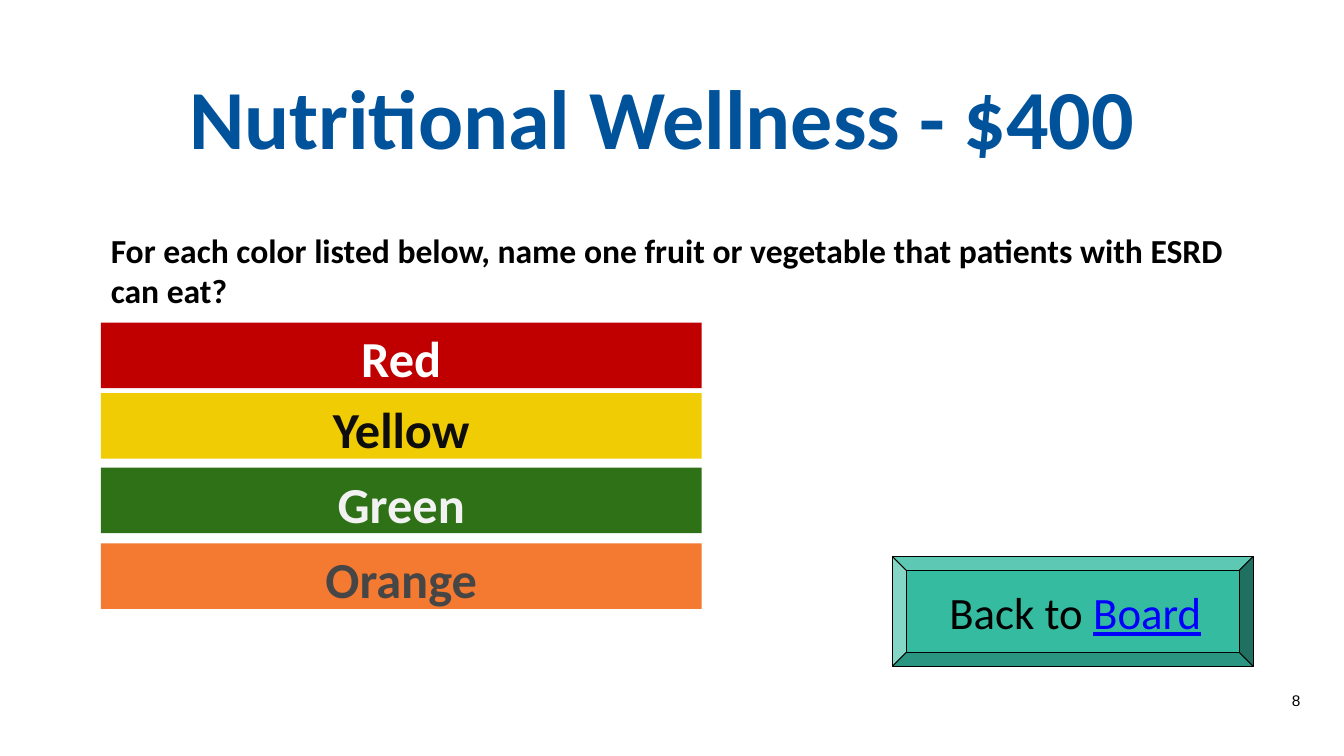
from pptx import Presentation
from pptx.dml.color import RGBColor as RGB
from pptx.enum.shapes import MSO_SHAPE as Shape
from pptx.enum.text import MSO_ANCHOR as Anchor, PP_ALIGN as Align
from pptx.util import Pt

PX = 9144
theme = {
    "font": "Calibri", "small": "Arial",
    "title": 60, "body": 24, "bar": 36, "button": 32, "number": 11,
    "blue": "00529B", "black": "000000", "teal": "35BBA0", "link": "0000FF",
    "red": ("C00000", "FFFFFF"), "yellow": ("F0CC04", "0D0D0D"),
    "green": ("2E7116", "F2F2F2"), "orange": ("F47931", "464646"),
}


def write(shape, text, size, color, bold=False, align=Align.CENTER, font="font", inset=(10, 5)):
    frame = shape.text_frame
    frame.word_wrap = True
    frame.vertical_anchor = Anchor.TOP
    frame.margin_left = frame.margin_right = inset[0] * PX
    frame.margin_top = frame.margin_bottom = inset[1] * PX
    para = frame.paragraphs[0]
    para.text = text
    para.alignment = align
    for run in para.runs:
        run.font.name = theme[font]
        run.font.size = Pt(theme[size])
        run.font.bold = bold
        run.font.color.rgb = RGB.from_string(color)
    return para


def block(kind, box, fill):
    shape = slide.shapes.add_shape(kind, *[n * PX for n in box])
    shape.shadow.inherit = False
    shape.fill.solid()
    shape.fill.fore_color.rgb = RGB.from_string(fill)
    shape.line.fill.background()
    return shape


deck = Presentation()
deck.slide_width, deck.slide_height = 1333 * PX, 750 * PX
slide = deck.slides.add_slide(deck.slide_layouts[6])

title = slide.shapes.add_textbox(152 * PX, 60 * PX, 1009 * PX, 108 * PX)
write(title, "Nutritional Wellness - $400", "title", theme["blue"], True)

prompt = slide.shapes.add_textbox(100 * PX, 223 * PX, 1142 * PX, 87 * PX)
write(prompt, "For each color listed below, name one fruit or vegetable that patients with ESRD can eat?",
      "body", theme["black"], True, Align.LEFT)

for name, top in (("Red", 320), ("Yellow", 390), ("Green", 464), ("Orange", 539)):
    fill, ink = theme[name.lower()]
    bar = block(Shape.RECTANGLE, (100, top, 596, 65), fill)
    write(bar, name, "bar", ink, True)

button = block(Shape.BEVEL, (885, 552, 358, 109), theme["teal"])
button.line.color.rgb = RGB.from_string(theme["black"])
button.line.width = Pt(0.75)
label = write(button, "Back to ", "button", theme["black"])
button.text_frame.vertical_anchor = Anchor.MIDDLE
button.text_frame.margin_left = 15 * PX
board = label.add_run()
board.text = "Board"
board.font.name = theme["font"]
board.font.size = Pt(theme["button"])
board.font.color.rgb = RGB.from_string(theme["link"])
board.font.underline = True

number = slide.shapes.add_textbox(1272 * PX, 682 * PX, 27 * PX, 26 * PX)
write(number, "8", "number", theme["black"], font="small", inset=(4, 4))

deck.save("out.pptx")
